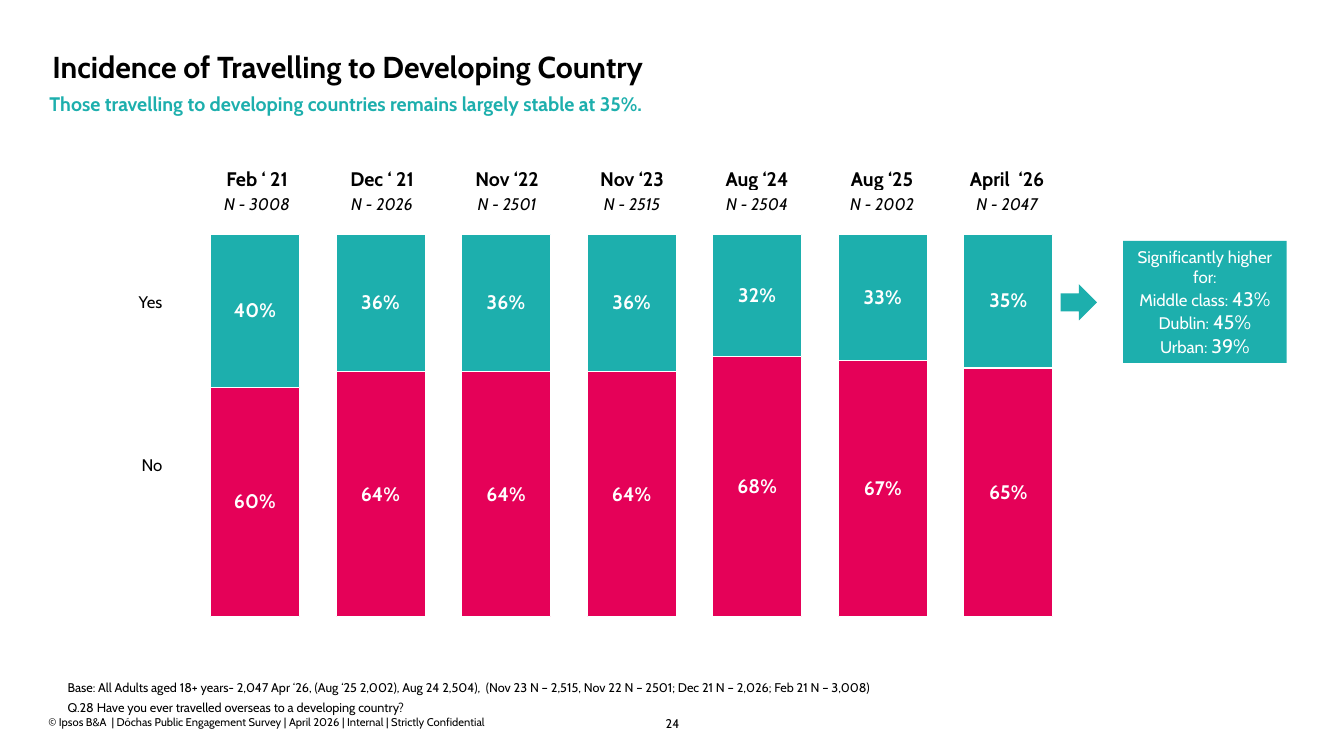
from dataclasses import dataclass
from lxml import etree
from pptx import Presentation
from pptx.chart.data import CategoryChartData
from pptx.dml.color import RGBColor
from pptx.enum.chart import XL_CHART_TYPE
from pptx.enum.shapes import MSO_SHAPE
from pptx.enum.text import MSO_ANCHOR, PP_ALIGN
from pptx.oxml.ns import qn
from pptx.util import Inches, Pt

COLUMN_STACKED_100 = XL_CHART_TYPE.COLUMN_STACKED_100
RECTANGLE, RIGHT_ARROW = MSO_SHAPE.RECTANGLE, MSO_SHAPE.RIGHT_ARROW
TOP, MIDDLE, BOTTOM = MSO_ANCHOR.TOP, MSO_ANCHOR.MIDDLE, MSO_ANCHOR.BOTTOM
LEFT, CENTER, RIGHT = PP_ALIGN.LEFT, PP_ALIGN.CENTER, PP_ALIGN.RIGHT

FONT = "Cabin"
BLACK = RGBColor(0x00, 0x00, 0x00)
WHITE = RGBColor(0xFF, 0xFF, 0xFF)
TEAL = RGBColor(0x1D, 0xAF, 0xAD)
PINK = RGBColor(0xE5, 0x01, 0x58)


@dataclass
class Style:
    size: float
    color: RGBColor = BLACK
    bold: bool = False
    italic: bool = False


@dataclass
class Label:
    box: tuple[float, float, float, float]
    lines: list[str]
    style: Style
    align: PP_ALIGN = LEFT
    anchor: MSO_ANCHOR = TOP
    line_spacing: float = 1.0
    space_after: float = 0


@dataclass
class Wave:
    date: str
    sample: str
    yes: int
    no: int


@dataclass
class Answer:
    name: str
    values: list[int]
    color: RGBColor


@dataclass
class Group:
    name: str
    share: str


LABELS = [
    Label((6.4, 7.09, 0.54, 0.15), ["24"], Style(9), CENTER, line_spacing=1.1),
    Label((0.48, 7.1, 6.1, 0.13),
          ["© Ipsos B&A  | Dóchas Public Engagement Survey | April 2026 | Internal | Strictly Confidential"],
          Style(8), anchor=BOTTOM),
    Label((0.52, 0.13, 12.14, 0.71), ["Incidence of Travelling to Developing Country"],
          Style(21.6, bold=True), anchor=BOTTOM, line_spacing=0.9),
    Label((0.49, 0.91, 10.22, 0.27),
          ["Those travelling to developing countries remains largely stable at 35%."],
          Style(14, TEAL, bold=True)),
    Label((0.67, 6.72, 10.22, 0.36),
          ["Base: All Adults aged 18+ years- 2,047 Apr ‘26, (Aug ‘25 2,002), Aug 24 2,504),  "
           "(Nov 23 N – 2,515, Nov 22 N – 2501; Dec 21 N – 2,026; Feb 21 N – 3,008)",
           "Q.28 Have you ever travelled overseas to a developing country?"],
          Style(9), line_spacing=1.15, space_after=2),
]
WAVES = [
    Wave("Feb ‘ 21", "N - 3008", 40, 60),
    Wave("Dec ‘ 21", "N - 2026", 36, 64),
    Wave("Nov ‘22", "N - 2501", 36, 64),
    Wave("Nov ‘23", "N - 2515", 36, 64),
    Wave("Aug ‘24", "N - 2504", 32, 68),
    Wave("Aug ‘25", "N - 2002", 33, 67),
    Wave("April  ‘26", "N - 2047", 35, 65),
]
ANSWERS = [
    Answer("Yes", [w.yes for w in WAVES], TEAL),
    Answer("No", [w.no for w in WAVES], PINK),
]
GROUPS = [Group("Middle class: ", "43%"), Group("Dublin: ", "45%"), Group("Urban: ", "39%")]
PLOT = {"x": 0.013, "y": 0.037, "w": 0.973, "h": 0.813}


def style_font(font, style: Style) -> None:
    font.name = FONT
    font.size = Pt(style.size)
    font.bold = style.bold
    font.italic = style.italic
    font.color.rgb = style.color


def add_label(s, label: Label) -> None:
    tf = s.shapes.add_textbox(*map(Inches, label.box)).text_frame
    tf.word_wrap = True
    tf.margin_left = tf.margin_right = tf.margin_top = tf.margin_bottom = 0
    tf.vertical_anchor = label.anchor
    tf.text = "\n".join(label.lines)
    for p in tf.paragraphs:
        p.alignment = label.align
        p.line_spacing = label.line_spacing
        p.space_after = Pt(label.space_after)
        style_font(p.runs[0].font, label.style)


def add_plain_table(s, left: float, top: float, col_width: float, heights: list[float],
                    rows: list[list[str]], styles: list[Style], align: PP_ALIGN,
                    anchors: list[MSO_ANCHOR]) -> None:
    """Add an unfilled table whose style, height and anchor are set row by row."""
    cols = len(rows[0])
    table = s.shapes.add_table(len(rows), cols, Inches(left), Inches(top),
                               Inches(col_width * cols), Inches(sum(heights))).table
    table.first_row = table.horz_banding = False
    for col in table.columns:
        col.width = Inches(col_width)
    for i, texts in enumerate(rows):
        table.rows[i].height = Inches(heights[i])
        for j, text in enumerate(texts):
            cell = table.cell(i, j)
            cell.fill.background()
            cell.margin_left = cell.margin_right = cell.margin_top = Inches(0.01)
            cell.margin_bottom = 0
            cell.vertical_anchor = anchors[i]
            p = cell.text_frame.paragraphs[0]
            p.text = text
            p.alignment = align
            style_font(p.runs[0].font, styles[i])


def set_plot_layout(chart) -> None:
    """Fix the inner plot area as fractions of the chart."""
    plot_area = chart.plots[0]._element.getparent()
    layout = plot_area.find(qn("c:layout"))
    if layout is None:
        layout = etree.Element(qn("c:layout"))
        plot_area.insert(0, layout)
    manual = etree.SubElement(layout, qn("c:manualLayout"))
    settings = {"layoutTarget": "inner", "xMode": "edge", "yMode": "edge", **PLOT}
    for tag, value in settings.items():
        etree.SubElement(manual, qn(f"c:{tag}")).set("val", str(value))


def add_answer_chart(s) -> None:
    data = CategoryChartData()
    data.categories = [w.date for w in WAVES]
    for answer in ANSWERS:
        data.add_series(answer.name, answer.values)
    chart = s.shapes.add_chart(COLUMN_STACKED_100, Inches(1.79), Inches(2.15),
                               Inches(8.96), Inches(4.67), data).chart
    style_font(chart.font, Style(18))
    chart.has_legend = chart.has_title = False
    chart.category_axis.visible = chart.value_axis.visible = False
    chart.value_axis.has_major_gridlines = False
    chart.value_axis.reverse_order = True
    plot = chart.plots[0]
    plot.gap_width, plot.overlap = 41, 100
    plot.vary_by_categories = False
    for series, answer in zip(plot.series, ANSWERS):
        series.format.fill.solid()
        series.format.fill.fore_color.rgb = answer.color
        series.format.line.color.rgb = WHITE
        series.format.line.width = Pt(0.75)
        labels = series.data_labels
        labels.show_value = True
        labels.number_format = '#"%"'
        labels.number_format_is_linked = False
        style_font(labels.font, Style(14, WHITE, bold=True))
    set_plot_layout(chart)


def add_teal_shape(s, kind: MSO_SHAPE, left: float, top: float, width: float, height: float):
    sp = s.shapes.add_shape(kind, Inches(left), Inches(top), Inches(width), Inches(height))
    sp.shadow.inherit = False
    sp.fill.solid()
    sp.fill.fore_color.rgb = TEAL
    sp.line.fill.background()
    return sp


def add_callout(s) -> None:
    tf = add_teal_shape(s, RECTANGLE, 11.14, 2.39, 1.62, 1.21).text_frame
    tf.word_wrap = True
    tf.vertical_anchor = MIDDLE
    tf.text = "Significantly higher for:"
    style_font(tf.paragraphs[0].runs[0].font, Style(12, WHITE))
    for group in GROUPS:
        p = tf.add_paragraph()
        for text, size in ((group.name, 12), (group.share, 14)):
            r = p.add_run()
            r.text = text
            style_font(r.font, Style(size, WHITE))
    for p in tf.paragraphs:
        p.alignment = CENTER


def main() -> None:
    prs = Presentation()
    prs.slide_width, prs.slide_height = Inches(13.33), Inches(7.5)
    s = prs.slides.add_slide(prs.slide_layouts[6])
    for label in LABELS:
        add_label(s, label)
    add_answer_chart(s)
    add_plain_table(s, 0, 2.89, 1.62, [1.22, 0.61], [[a.name] for a in ANSWERS],
                    [Style(12)] * 2, RIGHT, [TOP, BOTTOM])
    add_plain_table(s, 1.93, 1.65, 1.24, [0.23, 0.25],
                    [[w.date for w in WAVES], [w.sample for w in WAVES]],
                    [Style(14, bold=True), Style(12, italic=True)], CENTER, [MIDDLE] * 2)
    add_callout(s)
    add_teal_shape(s, RIGHT_ARROW, 10.52, 2.82, 0.36, 0.36)
    prs.save("out.pptx")


if __name__ == "__main__":
    main()
